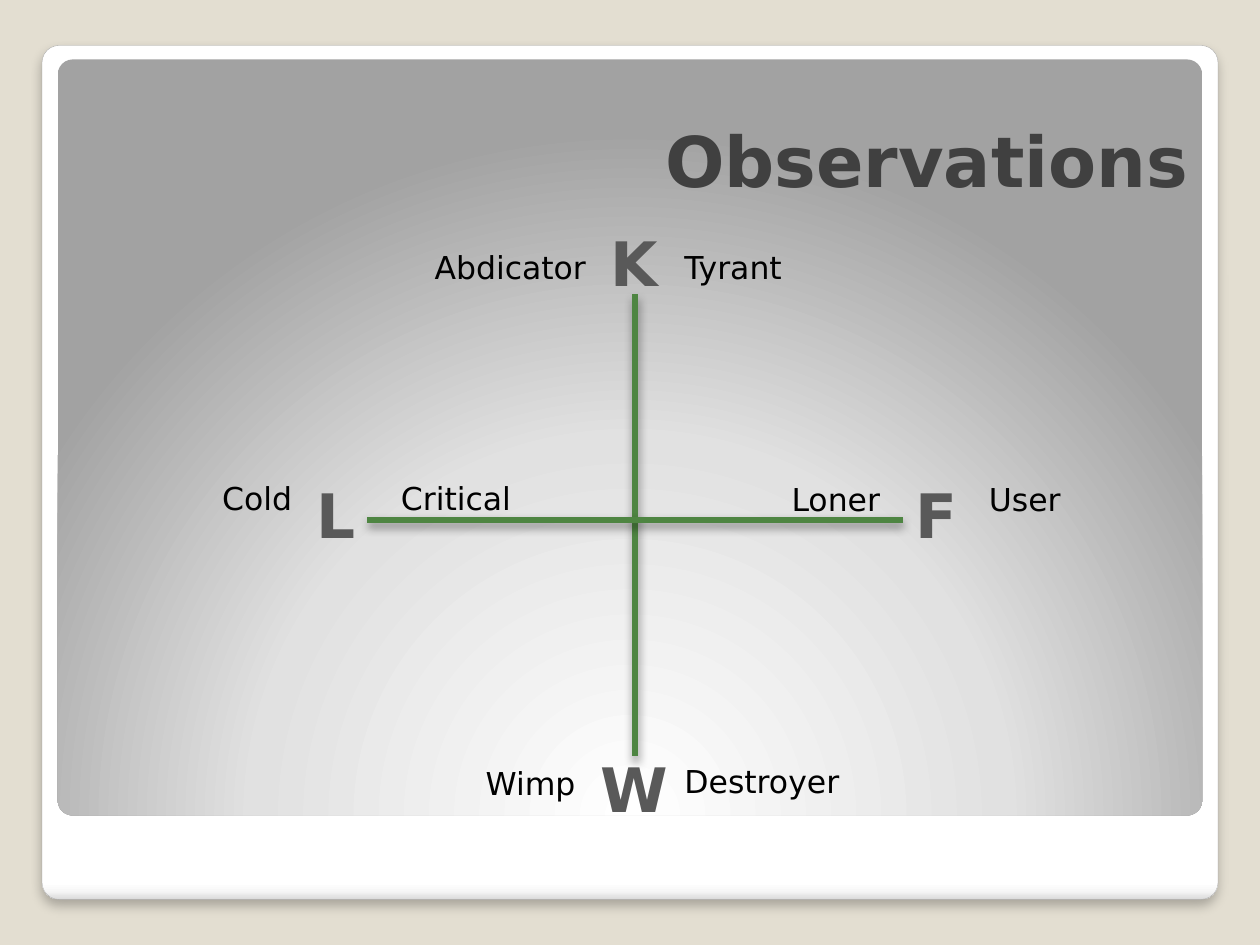
from lxml import etree
from pptx import Presentation
from pptx.dml.color import RGBColor
from pptx.enum import shapes as sh, text as tx
from pptx.oxml import parse_xml
from pptx.util import Pt

NS = 'xmlns:a="http://schemas.openxmlformats.org/drawingml/2006/main"'
FACE = "DejaVu Sans"
SAND = RGBColor(0xE3, 0xDE, 0xD1)
EDGE = RGBColor(0xA4, 0xA4, 0xA4)
GREEN = RGBColor(0x4E, 0x85, 0x42)
DARK = RGBColor(0x40, 0x40, 0x40)
GRAY = RGBColor(0x59, 0x59, 0x59)
BLACK = RGBColor(0, 0, 0)


def shade(item, alpha, blur, dist):
    item._element.spPr.append(parse_xml(
        f'<a:effectLst {NS}><a:outerShdw blurRad="{Pt(blur)}" dist="{Pt(dist)}" '
        f'dir="5400000" rotWithShape="0"><a:srgbClr val="000000">'
        f'<a:alpha val="{alpha * 1000}"/></a:srgbClr></a:outerShdw></a:effectLst>'))


def write(box, words, side, form):
    para = box.text_frame.paragraphs[0]
    para.alignment = side
    run = para.add_run()
    run.text = words
    for key, val in form.items():
        setattr(run.font, key, val)
    run.font.color.rgb = INK[form["size"]]


TITLE = {"name": FACE, "size": Pt(40), "bold": True}
AXIS = {"name": FACE, "size": Pt(35), "bold": True}
WORD = {"name": FACE, "size": Pt(18), "bold": False}
INK = {Pt(40): DARK, Pt(35): GRAY, Pt(18): BLACK}
LEFT, RIGHT = tx.PP_ALIGN.LEFT, tx.PP_ALIGN.RIGHT

deck = Presentation()
deck.slide_width, deck.slide_height = Pt(720), Pt(540)
slide = deck.slides.add_slide(deck.slide_layouts[5])
slide.background.fill.solid()
slide.background.fill.fore_color.rgb = SAND

panels = [
    ((24, 26, 672, 488),
     [(0, "FFFFFF"), (98, "FFFFFF"), (99, "F7F7F7"), (100, "DADADA")],
     '<a:lin ang="5400000" scaled="0"/>'),
    ((33, 34, 654, 432),
     [(0, "FFFFFF"), (55, "E1E1E1"), (100, "A2A2A2")],
     '<a:path path="circle"><a:fillToRect l="50000" t="175000" r="50000" b="-75000"/></a:path>'),
]
cards = []
for place, stops, way in panels:
    card = slide.shapes.add_shape(sh.MSO_SHAPE.ROUNDED_RECTANGLE, *map(Pt, place))
    card.adjustments[0] = 0.02
    marks = "".join(f'<a:gs pos="{pos * 1000}"><a:srgbClr val="{hue}"/></a:gs>'
                    for pos, hue in stops)
    card._element.spPr.insert(2, parse_xml(
        f'<a:gradFill {NS} rotWithShape="1"><a:gsLst>{marks}</a:gsLst>{way}</a:gradFill>'))
    cards.append(card)
frame, field = cards
frame.line.color.rgb = EDGE
frame.line.width = Pt(0.16)
shade(frame, 25, 6, 4)
field.line.fill.background()
field.shadow.inherit = False

for ends in [(363, 168, 363, 432), (210, 297, 516, 297)]:
    line = slide.shapes.add_connector(sh.MSO_CONNECTOR.STRAIGHT, *map(Pt, ends))
    line.line.color.rgb = GREEN
    line.line.width = Pt(3.35)
    shade(line, 40, 5.2, 3)

title = slide.shapes.title
title.left, title.top, title.width, title.height = map(Pt, (42, 36, 644, 83))
title.text_frame.vertical_anchor = tx.MSO_ANCHOR.BOTTOM
title.text_frame.auto_size = tx.MSO_AUTO_SIZE.NONE
write(title, "Observations", RIGHT, TITLE)
slide.shapes._spTree.append(title._element)

labels = [
    ("K", 342, 125, 42, LEFT, AXIS),
    ("F", 516, 269, 42, LEFT, AXIS),
    ("W", 336, 426, 42, LEFT, AXIS),
    ("L", 174, 269, 42, LEFT, AXIS),
    ("Abdicator", 240, 138, 102, RIGHT, WORD),
    ("Tyrant", 384, 138, 102, LEFT, WORD),
    ("Wimp", 234, 433, 102, RIGHT, WORD),
    ("Destroyer", 384, 432, 126, LEFT, WORD),
    ("Cold", 72, 270, 102, RIGHT, WORD),
    ("Critical", 222, 270, 102, LEFT, WORD),
    ("Loner", 408, 271, 102, RIGHT, WORD),
    ("User", 558, 271, 102, LEFT, WORD),
]
for words, x, y, wide, side, form in labels:
    high = 50 if form is AXIS else 29
    box = slide.shapes.add_textbox(Pt(x), Pt(y), Pt(wide), Pt(high))
    box.text_frame.word_wrap = True
    box.text_frame.auto_size = tx.MSO_AUTO_SIZE.SHAPE_TO_FIT_TEXT
    write(box, words, side, form)

deck.save("out.pptx")
